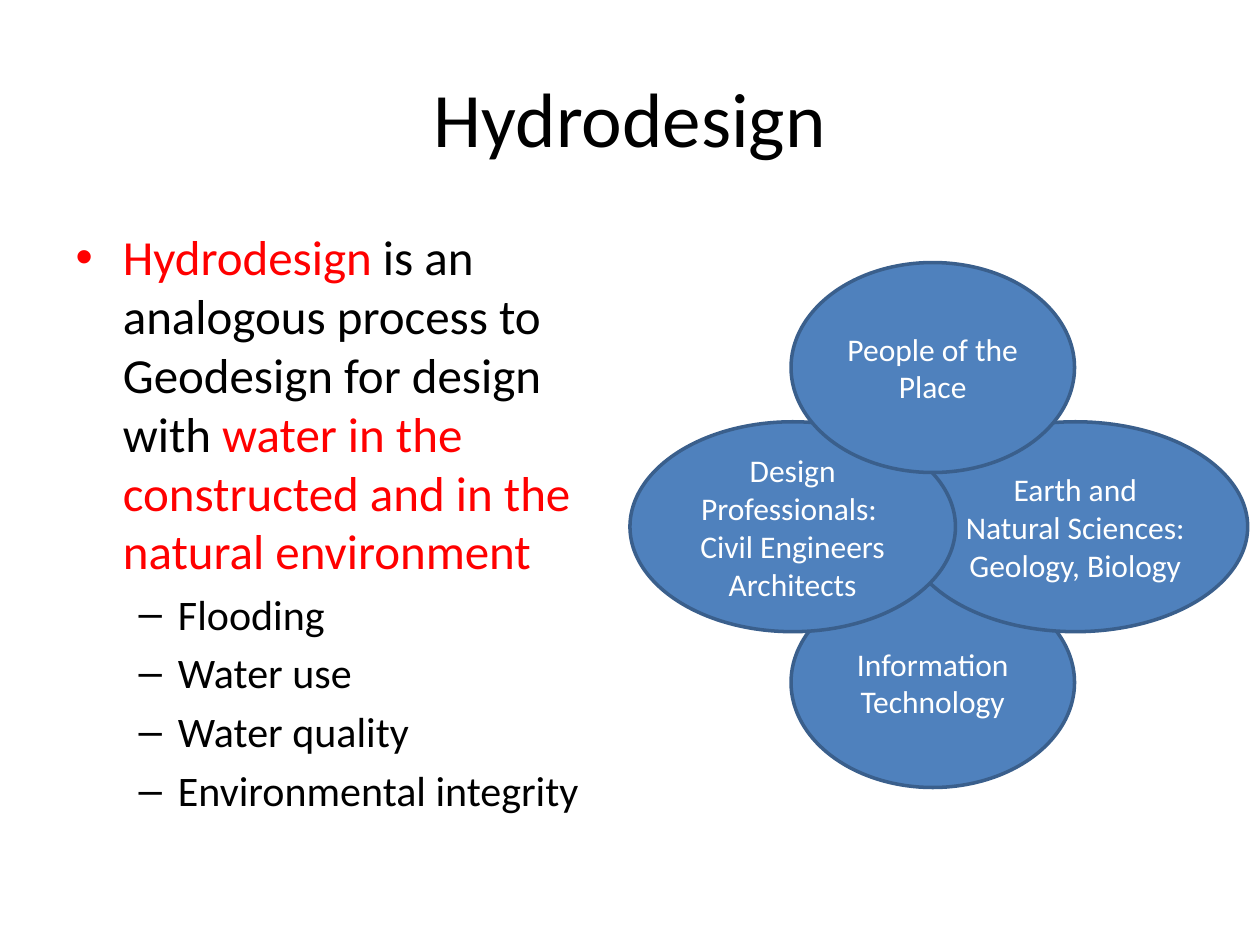
from pptx import Presentation
from pptx.dml.color import RGBColor
from pptx.enum.shapes import MSO_SHAPE as Shape
from pptx.enum.text import MSO_ANCHOR as Anchor, PP_ALIGN as Align
from pptx.util import Pt

BLACK = RGBColor(0x00, 0x00, 0x00)
WHITE = RGBColor(0xFF, 0xFF, 0xFF)
RED = RGBColor(0xFF, 0x00, 0x00)
BLUE = RGBColor(0x4F, 0x81, 0xBD)
DARK_BLUE = RGBColor(0x3A, 0x5F, 0x8C)

DEFINITION = [
    ("Hydrodesign", RED),
    (" is an analogous process to Geodesign for design with ", BLACK),
    ("water in the constructed and in the natural environment", RED),
]
CONCERNS = ["Flooding", "Water use", "Water quality", "Environmental integrity"]
CENTRE_LEFT, CENTRE_WIDTH = 452, 162
TOP, MIDDLE, BOTTOM = 150, 241, 330
GROUPS = [
    ("Information Technology", CENTRE_LEFT, BOTTOM, CENTRE_WIDTH),
    ("Earth and Natural Sciences: Geology, Biology", 516, MIDDLE, 197),
    ("Design Professionals: \vCivil Engineers Architects", 360, MIDDLE, 186),
    ("People of the Place", CENTRE_LEFT, TOP, CENTRE_WIDTH),
]


class SlideBuilder:
    """Holds the text style and the current slide."""

    font_name = "Calibri"
    title_size, body_size, sub_size, label_size = 44, 28, 24, 18
    oval_height = 120

    def __init__(self, deck):
        self.slide = deck.slides.add_slide(deck.slide_layouts[1])

    def place(self, box, left, top, width, height):
        box.left, box.top = Pt(left), Pt(top)
        box.width, box.height = Pt(width), Pt(height)

    def style(self, para, size, color):
        for span in para.runs:
            span.font.name = self.font_name
            span.font.size = Pt(size)
            span.font.color.rgb = color

    def title(self, text):
        box = self.slide.shapes.title
        self.place(box, 36, 21.6, 648, 90)
        box.text_frame.text = text
        self.style(box.text_frame.paragraphs[0], self.title_size, BLACK)

    def body(self, spans, items):
        box = self.slide.placeholders[1]
        self.place(box, 36, 126, 318, 356.4)
        para = box.text_frame.paragraphs[0]
        for text, color in spans:
            span = para.add_run()
            span.text = text
            span.font.name = self.font_name
            span.font.size = Pt(self.body_size)
            span.font.color.rgb = color
        for item in items:
            para = box.text_frame.add_paragraph()
            para.text = item
            para.level = 1
            self.style(para, self.sub_size, BLACK)

    def oval(self, text, left, top, width):
        oval = self.slide.shapes.add_shape(
            Shape.OVAL, Pt(left), Pt(top), Pt(width), Pt(self.oval_height)
        )
        oval.shadow.inherit = False
        oval.fill.solid()
        oval.fill.fore_color.rgb = BLUE
        oval.line.color.rgb = DARK_BLUE
        oval.line.width = Pt(2)
        frame = oval.text_frame
        frame.text = text
        frame.word_wrap = True
        frame.vertical_anchor = Anchor.MIDDLE
        para = frame.paragraphs[0]
        para.alignment = Align.CENTER
        self.style(para, self.label_size, WHITE)


def main():
    deck = Presentation()
    deck.slide_width, deck.slide_height = Pt(720), Pt(540)
    page = SlideBuilder(deck)
    page.title("Hydrodesign")
    page.body(DEFINITION, CONCERNS)
    for group in GROUPS:
        page.oval(*group)
    deck.save("out.pptx")


if __name__ == "__main__":
    main()
